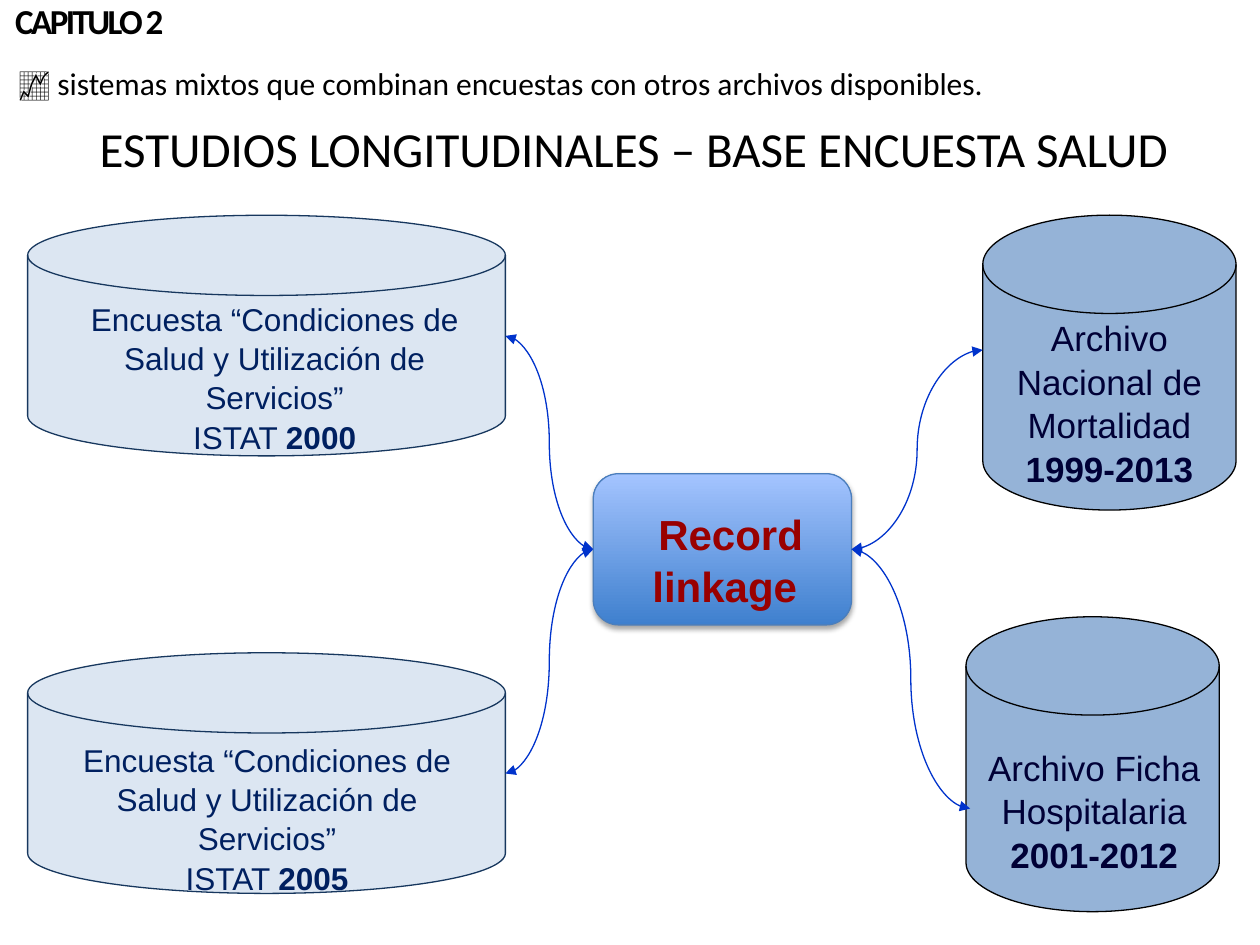
"""Builds a slide on linking health surveys with mortality and hospital records."""
from lxml import etree
from pptx import Presentation
from pptx.dml.color import RGBColor
from pptx.enum import shapes, text
from pptx.oxml import ns
from pptx.util import Pt

THEME = {
    "heading_font": "Calibri", "diagram_font": "Arial",
    "chapter_size": 20, "topic_size": 18, "headline_size": 28,
    "survey_size": 18, "archive_size": 20, "hub_size": 24,
    "ink": "000000", "survey_ink": "002060", "archive_ink": "000036", "hub_ink": "990000",
    "survey_fill": "DCE6F2", "survey_line": "17375E",
    "archive_fill": "95B3D7", "archive_line": "000000",
    "hub_bottom": "3F80CE", "hub_top": "A4C4FF", "hub_line": "4B7EBC",
    "link": "0033CC", "line_width": 0.75,
}

CHAPTER = "CAPITULO 2"
TOPIC = "📈 sistemas mixtos que combinan encuestas con otros archivos disponibles."
HEADLINE = "ESTUDIOS LONGITUDINALES – BASE ENCUESTA SALUD"
HUB = "Record linkage "
SURVEY = "Encuesta “Condiciones de Salud y Utilización de Servicios”"

SURVEY_SIZE = (273, 137.5)
ARCHIVE_SIZE = (144.7, 168.5)
HUB_BOX = (339, 270.7, 147.6, 86.4)

SOURCES = [
    {"role": "survey", "at": (15.8, 123), "label": (28.8, 167, 256.3, 95),
     "lines": [[(SURVEY, False)], [("ISTAT ", False), ("2000", True)]], "join": (288.8, 192)},
    {"role": "archive", "at": (561.6, 123), "label": (561.6, 176.4, 144.7, 47.5),
     "lines": [[("Archivo Nacional de Mortalidad", False)], [("1999-2013", True)]],
     "join": (561.6, 200)},
    {"role": "archive", "at": (552, 352.5), "label": (554.4, 422, 141.8, 81.4),
     "lines": [[("Archivo Ficha Hospitalaria", False)], [("2001-2012", True)]],
     "join": (554.4, 462)},
    {"role": "survey", "at": (15.8, 373), "label": (24.5, 419, 256.3, 57),
     "lines": [[(SURVEY, False)], [("ISTAT ", False), ("2005", True)]], "join": (288.8, 442)},
]


def points(values):
    return [Pt(value) for value in values]


def color(name):
    return RGBColor.from_string(THEME[name])


def style_run(run, font, size, ink, bold=False):
    run.font.name = THEME[font]
    run.font.size = Pt(THEME[size])
    run.font.color.rgb = color(ink)
    run.font.bold = bold


def add_label(slide, box, lines, font, size, ink, align, wrap=True, spacing=None):
    frame = slide.shapes.add_textbox(*points(box)).text_frame
    frame.word_wrap = wrap
    for index, line in enumerate(lines):
        paragraph = frame.add_paragraph() if index else frame.paragraphs[0]
        paragraph.alignment = align
        paragraph.line_spacing = spacing
        for words, bold in line:
            run = paragraph.add_run()
            run.text = words
            style_run(run, font, size, ink, bold)


def add_outlined(slide, kind, box, line):
    outlined = slide.shapes.add_shape(kind, *points(box))
    outlined.shadow.inherit = False
    outlined.line.color.rgb = color(line)
    outlined.line.width = Pt(THEME["line_width"])
    return outlined


def add_title(slide):
    title = slide.shapes.title
    title.left, title.top, title.width, title.height = points((1.5, -4.3, 708, 31.7))
    frame = title.text_frame
    frame.text = CHAPTER
    frame.auto_size = text.MSO_AUTO_SIZE.NONE
    frame.vertical_anchor = text.MSO_ANCHOR.MIDDLE
    frame.paragraphs[0].alignment = text.PP_ALIGN.LEFT
    run = frame.paragraphs[0].runs[0]
    style_run(run, "heading_font", "chapter_size", "ink", True)
    run._r.get_or_add_rPr().set("spc", "-150")


def add_hub(slide):
    hub = add_outlined(slide, shapes.MSO_SHAPE.FLOWCHART_ALTERNATE_PROCESS, HUB_BOX, "hub_line")
    hub.fill.gradient()
    hub.fill.gradient_angle = 90
    for stop, name in zip(hub.fill.gradient_stops, ("hub_bottom", "hub_top")):
        stop.color.rgb = color(name)
    effects = hub._element.spPr.find(ns.qn("a:effectLst"))
    shadow = etree.SubElement(effects, ns.qn("a:outerShdw"), blurRad=str(Pt(3.1)),
                              dist=str(Pt(1.8)), dir="5400000", rotWithShape="0")
    shade = etree.SubElement(shadow, ns.qn("a:srgbClr"), val="000000")
    etree.SubElement(shade, ns.qn("a:alpha"), val="35000")
    add_label(slide, (362, 285.8, 111, 55.4), [[(HUB, True)]], "diagram_font",
              "hub_size", "hub_ink", text.PP_ALIGN.CENTER, spacing=1.04)
    return hub


def add_source(slide, source):
    role = source["role"]
    size = SURVEY_SIZE if role == "survey" else ARCHIVE_SIZE
    disk = add_outlined(slide, shapes.MSO_SHAPE.FLOWCHART_MAGNETIC_DISK,
                        source["at"] + size, f"{role}_line")
    disk.fill.solid()
    disk.fill.fore_color.rgb = color(f"{role}_fill")
    add_label(slide, source["label"], source["lines"], "diagram_font", f"{role}_size",
              f"{role}_ink", text.PP_ALIGN.CENTER, spacing=1.04)


def add_link(slide, hub, source):
    left, top, width, height = HUB_BOX
    side, start_x = (1, left) if source["role"] == "survey" else (3, left + width)
    link = slide.shapes.add_connector(
        shapes.MSO_CONNECTOR.CURVE, *points((start_x, top + height / 2) + source["join"]))
    link.begin_connect(hub, side)
    link.line.color.rgb = color("link")
    link.line.width = Pt(THEME["line_width"])
    outline = link.line._get_or_add_ln()
    for end in ("a:headEnd", "a:tailEnd"):
        etree.SubElement(outline, ns.qn(end), type="triangle")
    etree.SubElement(link._element.spPr, ns.qn("a:effectLst"))


def main():
    deck = Presentation()
    deck.slide_width, deck.slide_height = Pt(720), Pt(540)
    slide = deck.slides.add_slide(deck.slide_layouts[5])
    add_title(slide)
    add_label(slide, (3.6, 33, 718.5, 29), [[(TOPIC, False)]], "heading_font",
              "topic_size", "ink", text.PP_ALIGN.LEFT)
    add_label(slide, (15, 64, 694, 46), [[(HEADLINE, False)]], "heading_font",
              "headline_size", "ink", text.PP_ALIGN.CENTER, wrap=False)
    for source in SOURCES:
        add_source(slide, source)
    hub = add_hub(slide)
    for source in SOURCES:
        add_link(slide, hub, source)
    deck.save("out.pptx")


if __name__ == "__main__":
    main()
